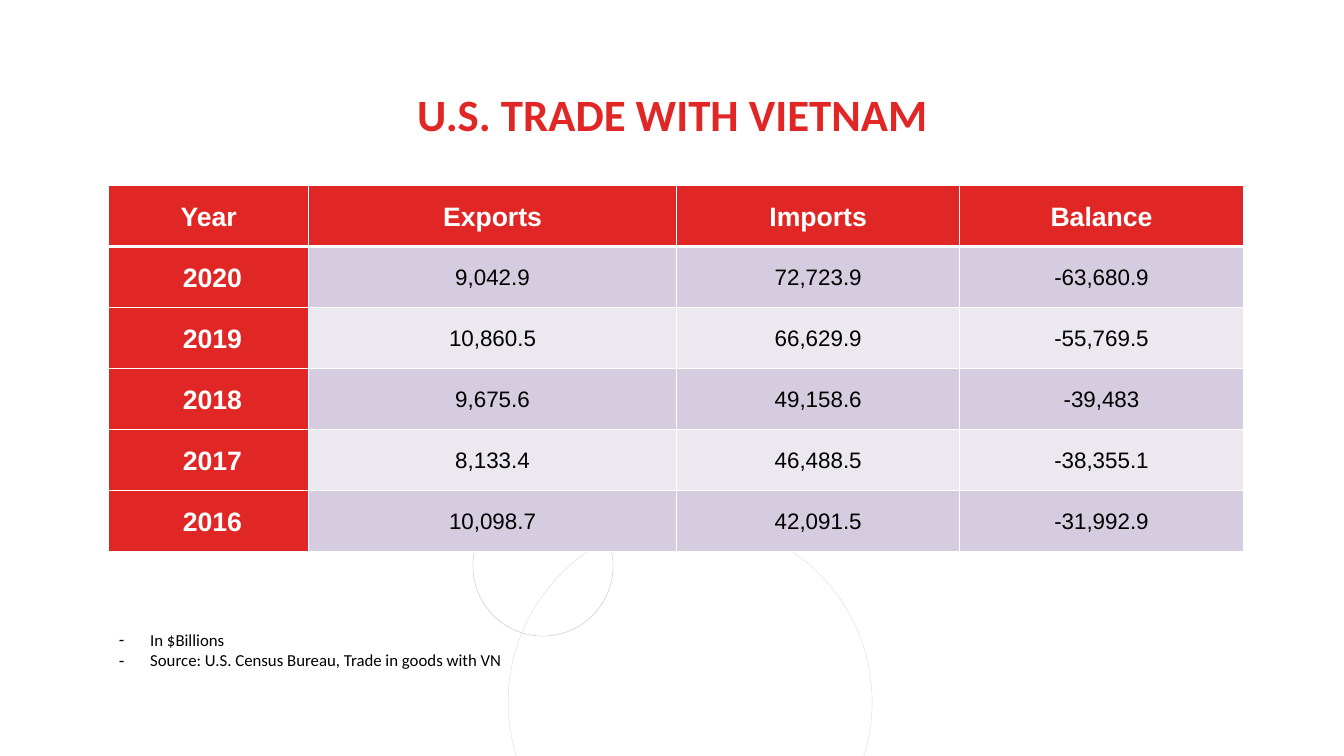
import pptx
import pptx.dml.color
import pptx.enum.shapes
import pptx.enum.text
import pptx.oxml
import pptx.oxml.ns
import pptx.util

Inches = pptx.util.Inches
Pt = pptx.util.Pt
RGBColor = pptx.dml.color.RGBColor
MIDDLE = pptx.enum.text.MSO_ANCHOR.MIDDLE
CENTER = pptx.enum.text.PP_ALIGN.CENTER

RED = RGBColor(0xE1, 0x27, 0x26)
WHITE = RGBColor(0xFF, 0xFF, 0xFF)
BLACK = RGBColor(0x00, 0x00, 0x00)
LILAC = RGBColor(0xD5, 0xCD, 0xDF)
PALE_LILAC = RGBColor(0xEB, 0xE8, 0xF0)
LIGHT_GRAY = RGBColor(0xD9, 0xD9, 0xD9)
GRAY = RGBColor(0xBF, 0xBF, 0xBF)

TITLE_FONT = {"name": "Calibri", "size": Pt(32), "bold": True}
HEADING_FONT = {"name": "Arial", "size": Pt(19), "bold": True}
VALUE_FONT = {"name": "Arial", "size": Pt(16), "bold": False}
NOTE_FONT = {"name": "Calibri", "size": Pt(12), "bold": False}

TRADE = [
    ("Year", "Exports", "Imports", "Balance"),
    (" 2020", "9,042.9", "72,723.9", "-63,680.9"),
    (" 2019", "10,860.5", "66,629.9", "-55,769.5"),
    (" 2018", "9,675.6", "49,158.6", "-39,483"),
    (" 2017", "8,133.4", "46,488.5", "-38,355.1"),
    (" 2016", "10,098.7", "42,091.5", "-31,992.9"),
]
COLUMN_WIDTHS = (1.98, 3.65, 2.81, 2.81)
NOTES = ("In $Billions", "Source: U.S. Census Bureau, Trade in goods with VN")


def apply_format(target, values):
    """Set every attribute named in values on the target."""
    for name, value in values.items():
        setattr(target, name, value)


def set_box(shape, left, top, width, height):
    """Place a shape in a box given in inches."""
    apply_format(shape, {"left": Inches(left), "top": Inches(top),
                         "width": Inches(width), "height": Inches(height)})


def write_paragraph(paragraph, text, font, color, layout):
    """Fill a paragraph with one formatted run."""
    run = paragraph.add_run()
    run.text = text
    apply_format(run.font, font)
    run.font.color.rgb = color
    apply_format(paragraph, layout)


def add_circle(slide, left, top, diameter, color):
    """Draw one thin decorative ring."""
    size = Inches(diameter)
    circle = slide.shapes.add_shape(
        pptx.enum.shapes.MSO_SHAPE.OVAL, Inches(left), Inches(top), size, size)
    circle.shadow.inherit = False
    circle.fill.background()
    circle.line.color.rgb = color
    circle.line.width = Pt(0.25)


def add_title(slide, left, top, width, height):
    """Write the heading in the title placeholder."""
    title = slide.shapes.title
    set_box(title, left, top, width, height)
    apply_format(title.text_frame, {
        "margin_left": 0, "margin_right": 0, "margin_top": 0, "margin_bottom": 0,
        "vertical_anchor": pptx.enum.text.MSO_ANCHOR.BOTTOM, "word_wrap": True})
    write_paragraph(title.text_frame.paragraphs[0], "U.S. TRADE WITH VIETNAM",
                    TITLE_FONT, RED, {"alignment": CENTER, "line_spacing": 0.9})


def set_borders(cell, top, bottom):
    """Give a cell white borders, with top and bottom widths in points."""
    properties = cell._tc.get_or_add_tcPr()
    widths = {"lnL": 1, "lnR": 1, "lnT": top, "lnB": bottom}
    for position, (tag, width) in enumerate(widths.items()):
        properties.insert(position, pptx.oxml.parse_xml(
            f'<a:{tag} {pptx.oxml.ns.nsdecls("a")} w="{Pt(width)}">'
            f'<a:solidFill><a:srgbClr val="{WHITE}"/></a:solidFill></a:{tag}>'))


def add_trade_table(slide, left, top, width, height):
    """Build the trade table with red headings and banded values."""
    table = slide.shapes.add_table(
        len(TRADE), len(COLUMN_WIDTHS), Inches(left), Inches(top),
        Inches(width), Inches(height)).table
    for column, column_width in zip(table.columns, COLUMN_WIDTHS):
        column.width = Inches(column_width)
    margins = dict.fromkeys(
        ("margin_left", "margin_right", "margin_top", "margin_bottom"), Inches(0.05))
    for row_index, record in enumerate(TRADE):
        band = LILAC if row_index % 2 else PALE_LILAC
        for column_index, text in enumerate(record):
            heading = row_index == 0 or column_index == 0
            cell = table.cell(row_index, column_index)
            apply_format(cell, {**margins, "vertical_anchor": MIDDLE})
            cell.fill.solid()
            cell.fill.fore_color.rgb = RED if heading else band
            set_borders(cell, 3 if row_index == 1 else 1, 3 if row_index == 0 else 1)
            write_paragraph(cell.text_frame.paragraphs[0], text,
                            HEADING_FONT if heading else VALUE_FONT,
                            WHITE if heading else BLACK,
                            {"alignment": CENTER, "line_spacing": 1.07})


def add_notes_list(slide, left, top, width, height):
    """Write the dashed notes in the body placeholder."""
    body = slide.placeholders[1]
    set_box(body, left, top, width, height)
    frame = body.text_frame
    apply_format(frame, {"word_wrap": True,
                         "auto_size": pptx.enum.text.MSO_AUTO_SIZE.SHAPE_TO_FIT_TEXT})
    for index, note in enumerate(NOTES):
        paragraph = frame.add_paragraph() if index else frame.paragraphs[0]
        write_paragraph(paragraph, note, NOTE_FONT, BLACK,
                        {"space_before": Pt(0), "line_spacing": 1.0})
        properties = paragraph._p.get_or_add_pPr()
        properties.set("marL", str(Inches(0.31)))
        properties.set("indent", str(-Inches(0.31)))
        properties.append(pptx.oxml.parse_xml(
            f'<a:buChar {pptx.oxml.ns.nsdecls("a")} char="-"/>'))


def build_trade_slide(presentation):
    """Add the slide on trade with Vietnam."""
    slide = presentation.slides.add_slide(presentation.slide_layouts[1])
    add_circle(slide, 5.04, 5.16, 3.61, LIGHT_GRAY)
    add_circle(slide, 4.69, 4.92, 1.39, GRAY)
    add_title(slide, 0.4, 0.4, 12.54, 1)
    add_trade_table(slide, 1.08, 1.84, sum(COLUMN_WIDTHS), 3.63)
    add_notes_list(slide, 1.08, 6.2, 4.12, 0.5)


def main():
    """Create and save the presentation."""
    presentation = pptx.Presentation()
    presentation.slide_width = Inches(13.33)
    presentation.slide_height = Inches(7.5)
    build_trade_slide(presentation)
    presentation.save("out.pptx")


if __name__ == "__main__":
    main()
